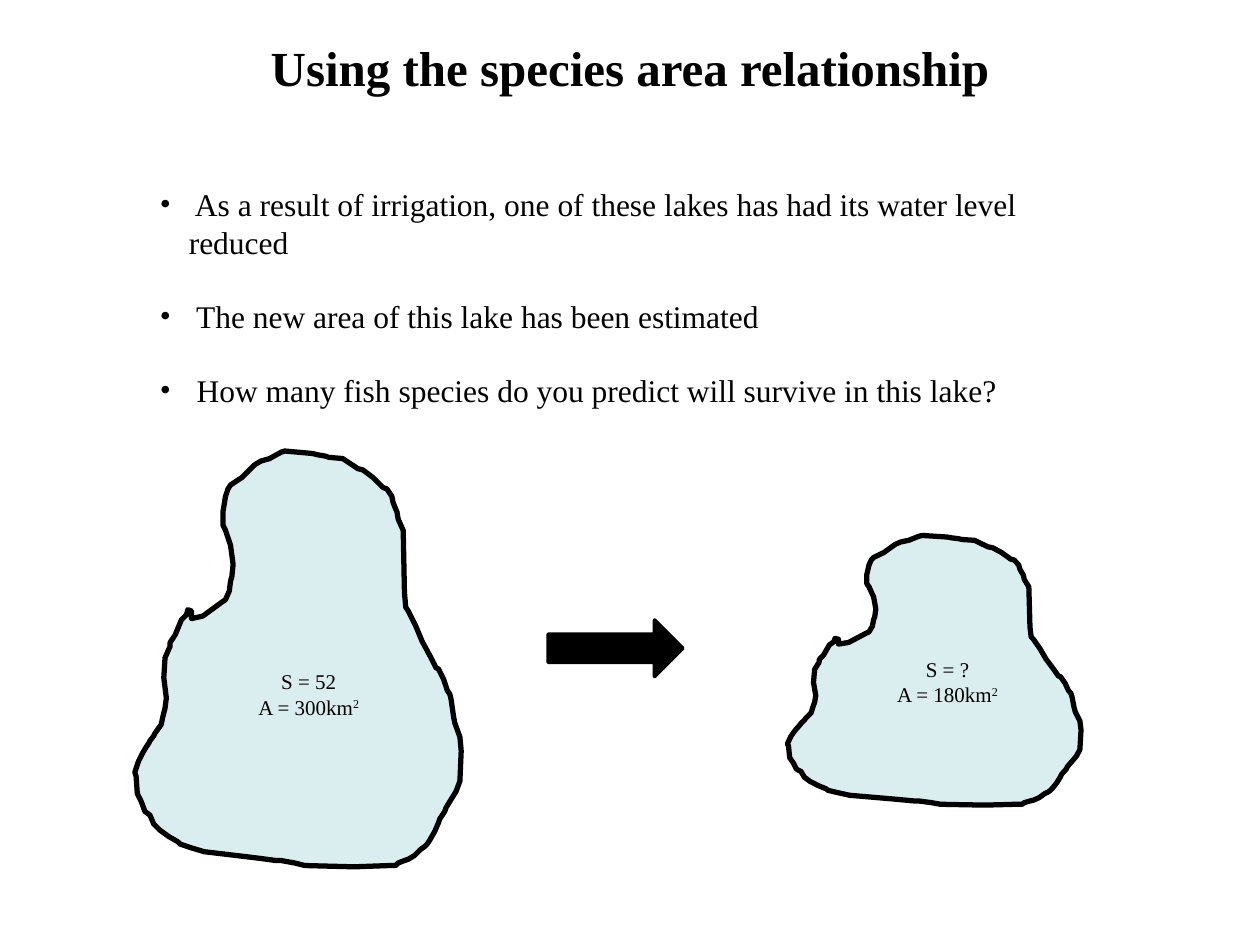
from lxml import etree
from pptx import Presentation
from pptx.dml.color import RGBColor
from pptx.enum.shapes import MSO_SHAPE
from pptx.enum.text import MSO_AUTO_SIZE, PP_ALIGN
from pptx.oxml.ns import qn
from pptx.util import Pt

PX = 9144
FONT = "Times New Roman"
BLACK = RGBColor(0, 0, 0)
WATER = RGBColor(0xDA, 0xED, 0xEF)
CENTER, LEFT = PP_ALIGN.CENTER, PP_ALIGN.LEFT
RIGHT_ARROW = MSO_SHAPE.RIGHT_ARROW
GROW = MSO_AUTO_SIZE.SHAPE_TO_FIT_TEXT

SHORE_WIDTH, SHORE_HEIGHT = 259, 330
SHORE = [
    (45, 133), (54, 131), (69, 120), (72, 118), (75, 111), (76, 103), (77, 100), (78, 90),
    (76, 75), (75, 72), (74, 69), (72, 63), (70, 59), (70, 48), (72, 36), (74, 30),
    (76, 27), (85, 21), (91, 15), (95, 11), (100, 8), (107, 6), (116, 1), (119, 0),
    (141, 2), (145, 3), (151, 4), (154, 5), (165, 6), (168, 8), (174, 12), (177, 14),
    (181, 15), (189, 21), (194, 26), (197, 29), (200, 30), (204, 36), (205, 41), (207, 46),
    (208, 48), (209, 54), (213, 63), (214, 112), (215, 124), (217, 127), (223, 139), (228, 151),
    (235, 164), (239, 172), (241, 173), (244, 179), (245, 181), (247, 187), (248, 190), (250, 193),
    (251, 197), (253, 211), (254, 216), (258, 227), (259, 238), (258, 262), (255, 270), (247, 283),
    (246, 286), (242, 292), (241, 295), (238, 302), (234, 309), (232, 312), (230, 314), (227, 316),
    (222, 321), (217, 324), (214, 325), (209, 327), (207, 329), (202, 329), (174, 330), (135, 329),
    (127, 327), (116, 325), (112, 325), (97, 323), (55, 318), (45, 315), (36, 312), (34, 310),
    (27, 306), (20, 301), (18, 299), (15, 296), (12, 289), (8, 286), (5, 278), (2, 272),
    (1, 258), (0, 255), (1, 252), (3, 246), (6, 240), (9, 235), (11, 232), (12, 230),
    (15, 226), (16, 224), (21, 217), (22, 212), (24, 204), (25, 196), (23, 180), (24, 164),
    (28, 155), (28, 152), (32, 146), (37, 134), (39, 132), (41, 130), (42, 126), (45, 127),
]


def add_text(page, box, lines, size, align=CENTER, bold=False):
    frame = page.shapes.add_textbox(*(length * PX for length in box)).text_frame
    frame.word_wrap = True
    frame.auto_size = GROW
    frame.text = "\n".join(lines)
    for para in frame.paragraphs:
        para.alignment = align
        for span in para.runs:
            style_span(span, size, bold)
    return frame


def style_span(span, size, bold=False):
    span.font.name = FONT
    span.font.size = Pt(size)
    span.font.bold = bold
    span.font.color.rgb = BLACK


def style_shape(shape, fill, line_width):
    shape.shadow.inherit = False
    shape.fill.solid()
    shape.fill.fore_color.rgb = fill
    shape.line.color.rgb = BLACK
    shape.line.width = Pt(line_width)
    etree.SubElement(shape.line._get_or_add_ln(), qn("a:round"))


def add_bullets(page, box, lines):
    frame = add_text(page, box, lines, 18, LEFT)
    for index, para in enumerate(frame.paragraphs):
        if index:
            para.space_before = Pt(20.7)
        properties = para._p.get_or_add_pPr()
        properties.set("marL", str(23 * PX))
        properties.set("indent", str(-23 * PX))
        etree.SubElement(properties, qn("a:buFont")).set("typeface", FONT)
        etree.SubElement(properties, qn("a:buChar")).set("char", "•")


def add_lake(page, box, label_box, species, area):
    left, top, width, height = box
    points = [
        (round((left + x * width / SHORE_WIDTH) * PX), round((top + y * height / SHORE_HEIGHT) * PX))
        for x, y in SHORE
    ]
    builder = page.shapes.build_freeform(*points[0])
    builder.add_line_segments(points[1:], close=True)
    style_shape(builder.convert_to_shape(), WATER, 3)

    label_left, label_top, label_width, label_height = label_box
    frame = add_text(
        page,
        (left + label_left, top + label_top, label_width, label_height),
        [f"S = {species}", f"A = {area}km"],
        12,
    )
    power = frame.paragraphs[1].add_run()
    power.text = "2"
    style_span(power, 12)
    power._r.get_or_add_rPr().set("baseline", "30000")


def add_arrow(page, box):
    arrow = page.shapes.add_shape(RIGHT_ARROW, *(length * PX for length in box))
    style_shape(arrow, BLACK, 2)


def main():
    deck = Presentation()
    deck.slide_width, deck.slide_height = 1000 * PX, 750 * PX
    page = deck.slides.add_slide(deck.slide_layouts[6])
    add_text(page, (0, 25, 1000, 57), ["Using the species area relationship"], 28, bold=True)
    add_bullets(page, (117, 142, 779, 162), [
        " As a result of irrigation, one of these lakes has had its water level reduced",
        " The new area of this lake has been estimated",
        " How many fish species do you predict will survive in this lake?",
    ])
    add_lake(page, (107, 358, 259, 330), (87, 168, 102, 51), "52", 300)
    add_lake(page, (625, 425, 233, 214), (71, 91, 112, 51), "?", 180)
    add_arrow(page, (435, 492, 107, 45))
    deck.save("out.pptx")


if __name__ == "__main__":
    main()
